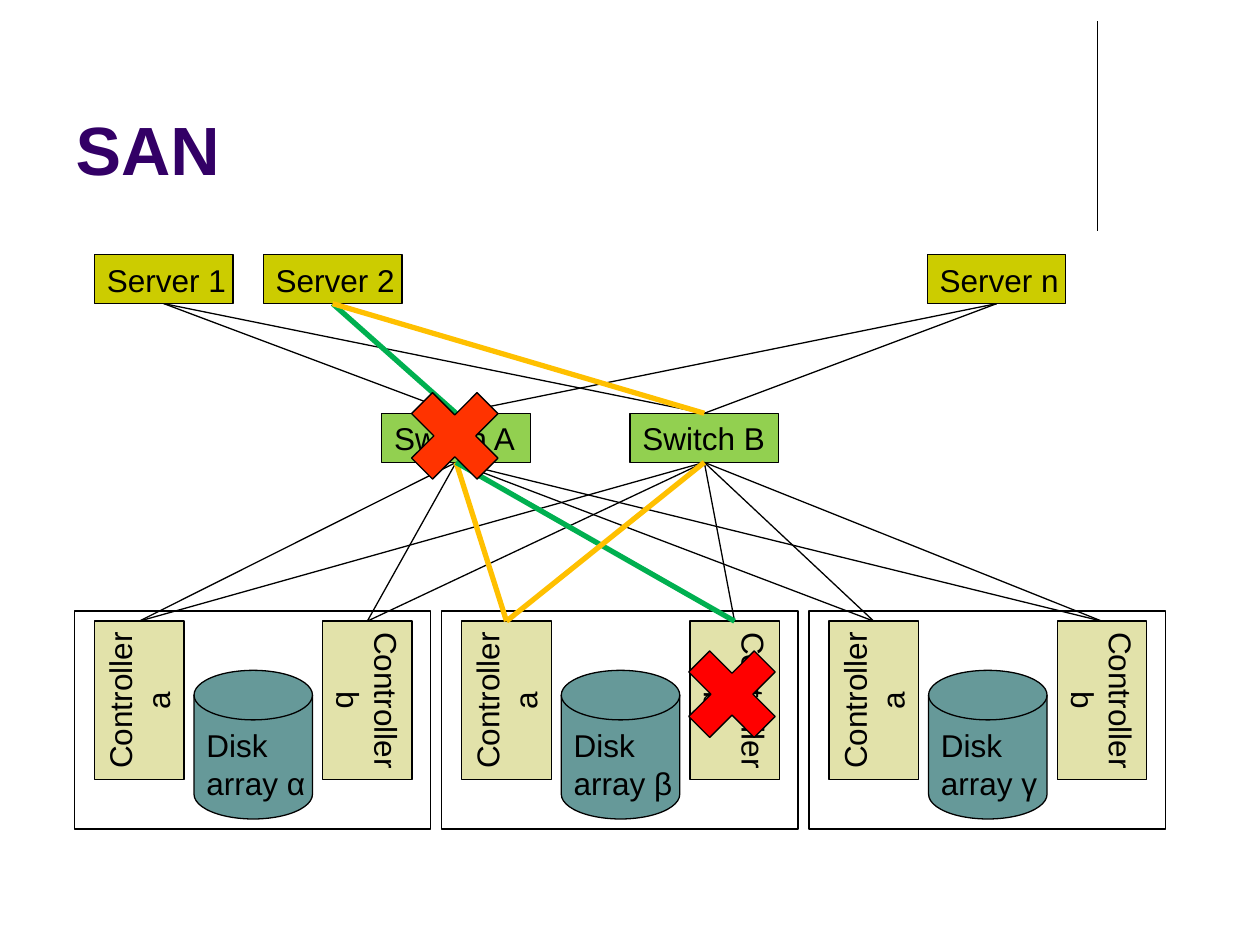
from lxml import etree
from pptx import Presentation
from pptx.dml.color import RGBColor
from pptx.enum.shapes import MSO_CONNECTOR, MSO_SHAPE
from pptx.enum.text import MSO_ANCHOR, PP_ALIGN
from pptx.oxml.ns import qn
from pptx.util import Inches, Pt

RECT, DISK, CROSS = MSO_SHAPE.RECTANGLE, MSO_SHAPE.FLOWCHART_MAGNETIC_DISK, MSO_SHAPE.MATH_MULTIPLY
LEFT, CENTER = PP_ALIGN.LEFT, PP_ALIGN.CENTER
TOP, BOTTOM = 0, 2

BLACK = RGBColor(0x00, 0x00, 0x00)
PURPLE = RGBColor(0x33, 0x00, 0x66)
OLIVE = RGBColor(0xCC, 0xCC, 0x00)
LIME = RGBColor(0x92, 0xD0, 0x50)
SAND = RGBColor(0xE2, 0xE2, 0xAA)
TEAL = RGBColor(0x66, 0x99, 0x99)
GREEN = RGBColor(0x00, 0xB0, 0x50)
ORANGE = RGBColor(0xFF, 0xC0, 0x00)
RED = RGBColor(0xFF, 0x00, 0x00)
SCARLET = RGBColor(0xFF, 0x33, 0x00)

SERVERS = [("Server 1", 0.75), ("Server 2", 2.09), ("Server n", 7.36)]
SWITCHES = [("Switch A", 3.03), ("Switch B", 5.0)]
ARRAYS = ["α", "β", "γ"]
# name, offset inside the array frame, text direction
CONTROLS = [("a", 0.16, "vert270"), ("b", 1.97, "vert")]
ROUTES = {
    ("Server 2", "Switch A"): GREEN,
    ("Switch A", "βb"): GREEN,
    ("Server 2", "Switch B"): ORANGE,
    ("Switch A", "βa"): ORANGE,
    ("Switch B", "βa"): ORANGE,
}
FAULTS = [(5.31, 5.01, RED), (3.11, 2.96, SCARLET)]

SERVER_Y, SWITCH_Y, FRAME_Y, CONTROL_Y, DISK_Y = 2.02, 3.28, 4.85, 4.93, 5.32
FRAME_X, PITCH = 0.59, 2.915

prs = Presentation()
prs.slide_width, prs.slide_height = Inches(10), Inches(7.5)
slide = prs.slides.add_slide(prs.slide_layouts[5])


def add_text(frame, lines, size, color, align=LEFT, bold=False):
    para = frame.paragraphs[0]
    para.alignment = align
    for i, line in enumerate(lines):
        if i:
            para.add_line_break()
        run = para.add_run()
        run.text = line
        font = run.font
        font.name, font.size, font.bold = "Arial", Pt(size), bold
        font.color.rgb = color


def add_box(home, kind, x, y, w, h, fill=None, lines=(), align=LEFT, turn=None):
    box = home.shapes.add_shape(kind, Inches(x), Inches(y), Inches(w), Inches(h))
    box.shadow.inherit = False
    if fill is None:
        box.fill.background()
    else:
        box.fill.solid()
        box.fill.fore_color.rgb = fill
    box.line.color.rgb = BLACK
    box.line.width = Pt(0.75)
    if lines:
        frame = box.text_frame
        frame.word_wrap = False
        frame.vertical_anchor = MSO_ANCHOR.TOP
        if turn:
            frame._txBody.bodyPr.set("vert", turn)
        add_text(frame, lines, 18, BLACK, align)
    return box


def add_line(color=BLACK, width=0.75, ends=(0, 0, 0, 0)):
    line = slide.shapes.add_connector(MSO_CONNECTOR.STRAIGHT, *map(Inches, ends))
    line.line.color.rgb = color
    line.line.width = Pt(width)
    etree.SubElement(line._element.spPr, qn("a:effectLst"))
    return line


title = slide.shapes.title
title.left, title.top, title.width, title.height = map(Inches, (0.5, 0.13, 8.25, 1.42))
title.text_frame.vertical_anchor = MSO_ANCHOR.BOTTOM
add_text(title.text_frame, ["SAN"], 39, PURPLE, bold=True)
add_line(ends=(8.71, 0.17, 8.71, 1.83))

servers = {name: add_box(slide, RECT, x, SERVER_Y, 1.1, 0.39, OLIVE, [name])
           for name, x in SERVERS}
switches = {name: add_box(slide, RECT, x, SWITCH_Y, 1.18, 0.39, LIME, [name])
            for name, x in SWITCHES}
controls = {}
for i, letter in enumerate(ARRAYS):
    x = FRAME_X + i * PITCH
    group = slide.shapes.add_group_shape()
    add_box(group, DISK, x + 0.95, DISK_Y, 0.94, 1.18, TEAL, ["Disk", "array " + letter])
    add_box(group, RECT, x, FRAME_Y, 2.83, 1.73)
    for name, shift, turn in CONTROLS:
        controls[letter + name] = add_box(group, RECT, x + shift, CONTROL_Y, 0.71, 1.26,
                                          SAND, ["Controller", name], CENTER, turn)

# Every box links to every box of the next row; the routes lie on top.
links = [(upper, lower, a, b)
         for upper, lower in ((servers, switches), (switches, controls))
         for a in upper for b in lower]
for upper, lower, a, b in sorted(links, key=lambda link: link[2:] in ROUTES):
    route = ROUTES.get((a, b))
    line = add_line(route or BLACK, 3 if route else 0.75)
    line.begin_connect(upper[a], BOTTOM)
    line.end_connect(lower[b], TOP)

for x, y, color in FAULTS:
    add_box(slide, CROSS, x, y, 1, 1, color)

prs.save("out.pptx")
